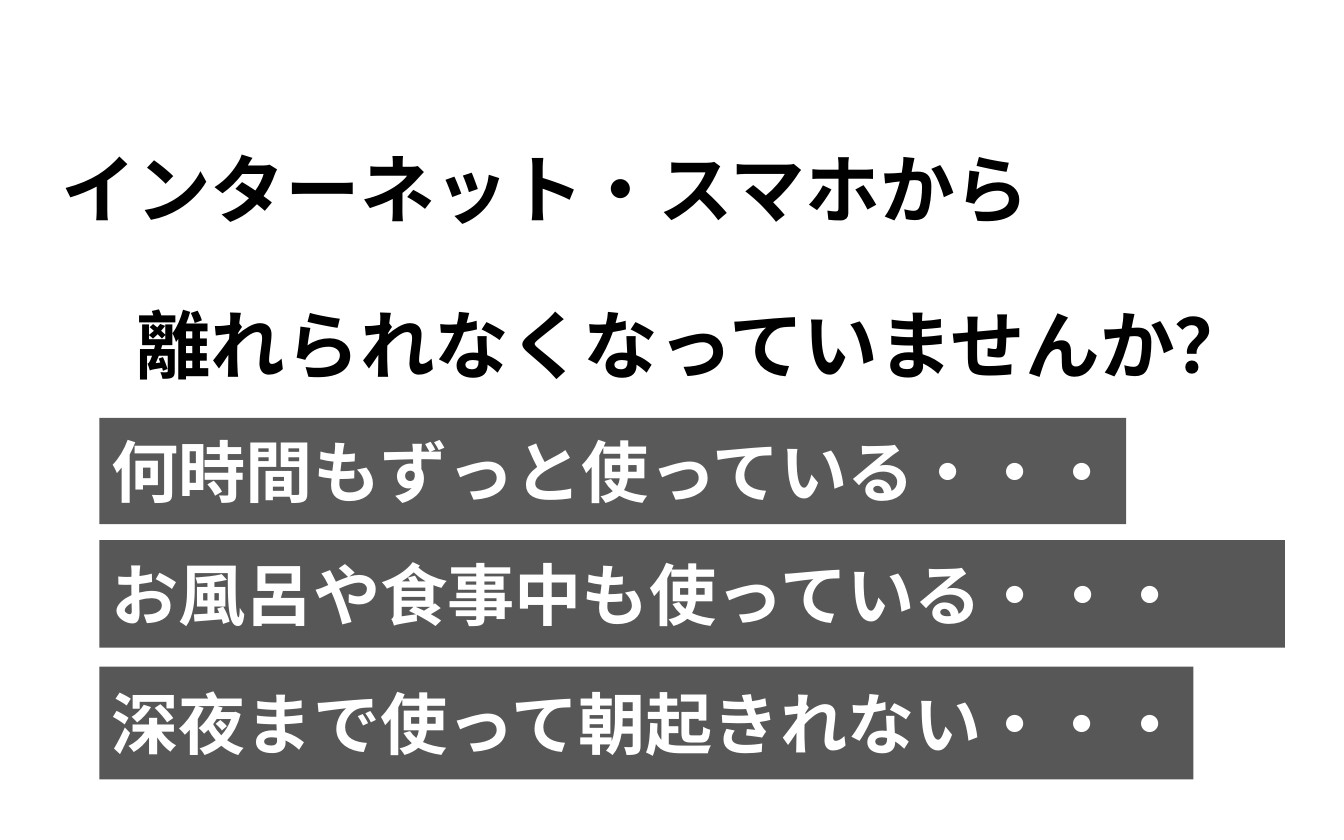
import pptx
import pptx.dml.color
import pptx.enum.shapes
import pptx.enum.text
import pptx.oxml.ns
import pptx.util
from lxml import etree

Inches = pptx.util.Inches
Pt = pptx.util.Pt
Align = pptx.enum.text.PP_ALIGN
Anchor = pptx.enum.text.MSO_ANCHOR

FONT = "Noto Sans CJK JP"
HEADING = ["インターネット・スマホから", "　離れられなくなっていませんか？"]
HABITS = [
    ("何時間もずっと使っている・・・", 3.11, 7.64, 0.79, "595959"),
    ("お風呂や食事中も使っている・・・", 4.02, 8.82, 0.8, "575757"),
    ("深夜まで使って朝起きれない・・・", 4.96, 8.14, 0.84, "575757"),
]
BAR_LEFT = 0.74


def color(value):
    return pptx.dml.color.RGBColor.from_string(value)


def write(frame, lines, size, ink, insets, anchor, spacing=None):
    frame.text = "\n".join(lines)
    frame.word_wrap = True
    frame.auto_size = pptx.enum.text.MSO_AUTO_SIZE.NONE
    frame.vertical_anchor = anchor
    frame.margin_left, frame.margin_top, frame.margin_right, frame.margin_bottom = map(Inches, insets)
    for para in frame.paragraphs:
        para.alignment = Align.LEFT
        if spacing:
            para.line_spacing = Pt(spacing)
        for span in para.runs:
            span.font.name = FONT
            span.font.size = Pt(size)
            span.font.bold = True
            span.font.color.rgb = color(ink)
            east_asian = etree.Element(pptx.oxml.ns.qn("a:ea"), typeface=FONT)
            span.font._element.find(pptx.oxml.ns.qn("a:latin")).addnext(east_asian)


def add_bar(page, text, top, width, height, fill):
    bar = page.shapes.add_shape(
        pptx.enum.shapes.MSO_SHAPE.RECTANGLE,
        Inches(BAR_LEFT), Inches(top), Inches(width), Inches(height),
    )
    bar.shadow.inherit = False
    bar.fill.solid()
    bar.fill.fore_color.rgb = color(fill)
    bar.line.fill.background()
    write(bar.text_frame, [text], 36, "FFFFFF", (0.09, 0, 0, 0), Anchor.MIDDLE)


def main():
    deck = pptx.Presentation()
    deck.slide_width, deck.slide_height = Inches(10), Inches(6.25)
    page = deck.slides.add_slide(deck.slide_layouts.get_by_name("Title Only"))
    title = page.shapes.title
    title.left, title.top = Inches(0.36), Inches(0.51)
    title.width, title.height = Inches(9.5), Inches(2.46)
    write(title.text_frame, HEADING, 40, "000000", (0.1, 0.05, 0.1, 0.05), Anchor.TOP, 84)
    for habit in HABITS:
        add_bar(page, *habit)
    deck.save("out.pptx")


if __name__ == "__main__":
    main()
